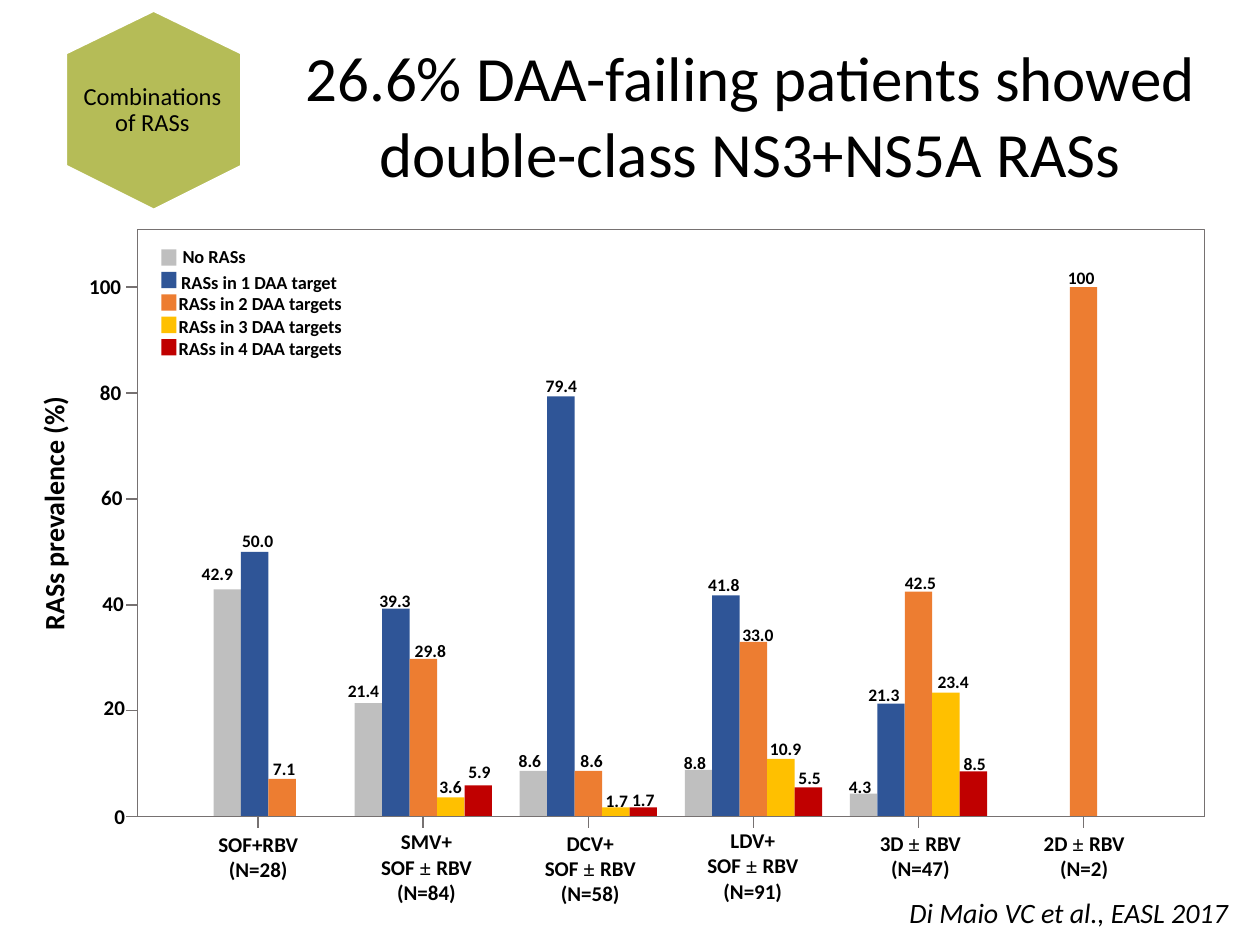
"""Build a slide with a bar diagram of RASs prevalence by treatment regimen."""
import lxml.etree
import pptx
import pptx.dml.color
import pptx.enum.shapes
import pptx.enum.text
import pptx.oxml.ns
import pptx.util

Inches = pptx.util.Inches
RGBColor = pptx.dml.color.RGBColor
Align = pptx.enum.text.PP_ALIGN
Anchor = pptx.enum.text.MSO_ANCHOR
AutoSize = pptx.enum.text.MSO_AUTO_SIZE

BLACK = RGBColor(0x00, 0x00, 0x00)
WHITE = RGBColor(0xFF, 0xFF, 0xFF)
AXIS_GRAY = RGBColor(0x76, 0x71, 0x71)
OLIVE = RGBColor(0xB5, 0xBC, 0x57)
GRAY = RGBColor(0xBF, 0xBF, 0xBF)
BLUE = RGBColor(0x2F, 0x55, 0x97)
ORANGE = RGBColor(0xED, 0x7D, 0x31)
YELLOW = RGBColor(0xFF, 0xC0, 0x00)
RED = RGBColor(0xC0, 0x00, 0x00)

PLOT_LEFT, PLOT_TOP, PLOT_RIGHT, BASELINE = 1.09, 1.82, 9.56, 6.48
UNIT_HEIGHT = 0.042
BAR_WIDTH = 0.218
FIRST_TICK, TICK_STEP, TICK_LENGTH = 2.05, 1.31, 0.09
LABEL_PADDING, DIGIT_WIDTH, POINT_WIDTH = 0.18, 0.08, 0.05

SERIES = [
    ("No RASs", GRAY, 1.35, 1.9),
    ("RASs in 1 DAA target", BLUE, 1.34, 2.1),
    ("RASs in 2 DAA targets", ORANGE, 1.32, 2.27),
    ("RASs in 3 DAA targets", YELLOW, 1.32, 2.45),
    ("RASs in 4 DAA targets", RED, 1.32, 2.63),
]

REGIMENS = [
    ("SOF+RBV\n(N=28)", (1.08, 6.55, 1.94, 0.5), 0.19,
     {0: ("42.9", 1.49, 4.42), 1: ("50.0", 1.81, 4.16), 2: ("7.1", 2.06, 5.97)}),
    ("SMV+\nSOF ± RBV\n(N=84)", (2.67, 6.53, 1.43, 0.71), 0,
     {0: ("21.4", 2.65, 5.35), 1: ("39.3", 2.9, 4.63), 2: ("29.8", 3.18, 5.03),
      3: ("3.6", 3.38, 6.11), 4: ("5.9", 3.61, 5.99)}),
    ("DCV+\nSOF ± RBV\n(N=58)", (3.97, 6.54, 1.43, 0.71), 0,
     {0: ("8.6", 4.01, 5.9), 1: ("79.4", 4.22, 2.93), 2: ("8.6", 4.5, 5.9),
      3: ("1.7", 4.7, 6.22), 4: ("1.7", 4.91, 6.21)}),
    ("LDV+\nSOF ± RBV\n(N=91)", (5.26, 6.52, 1.43, 0.71), 0,
     {0: ("8.8", 5.32, 5.92), 1: ("41.8", 5.51, 4.51), 2: ("33.0", 5.78, 4.9),
      3: ("10.9", 6, 5.81), 4: ("5.5", 6.23, 6.04)}),
    ("3D ± RBV\n(N=47)", (6.59, 6.54, 1.43, 0.5), 0,
     {0: ("4.3", 6.63, 6.11), 1: ("21.3", 6.78, 5.38), 2: ("42.5", 7.07, 4.49),
      3: ("23.4", 7.33, 5.28), 4: ("8.5", 7.54, 5.93)}),
    ("2D ± RBV\n(N=2)", (7.89, 6.54, 1.43, 0.5), 0, {2: ("100", 8.37, 2.07)}),
]

SCALE = [(0, 0.42, 6.33), (20, 0.42, 5.46), (40, 0.41, 4.64),
         (60, 0.4, 3.8), (80, 0.39, 2.96), (100, 0.39, 2.12)]


class DiagramSlide:
    """Hold the text style and the slide, and draw each kind of element."""

    def __init__(self, slide, font="Calibri", symbol_font="Times New Roman"):
        self.shapes = slide.shapes
        self.font = font
        self.symbol_font = symbol_font

    def text(self, content, box, size, align=Align.CENTER, wrap=True,
             anchor=Anchor.TOP, spacing=None, rotation=0, **style):
        shape = self.shapes.add_textbox(*map(Inches, box))
        shape.rotation = rotation
        frame_format = {"word_wrap": wrap, "vertical_anchor": anchor,
                        "auto_size": AutoSize.SHAPE_TO_FIT_TEXT}
        for name, value in frame_format.items():
            setattr(shape.text_frame, name, value)
        for index, line in enumerate(content.split("\n")):
            paragraph = (shape.text_frame.add_paragraph() if index
                         else shape.text_frame.paragraphs[0])
            paragraph.alignment = align
            paragraph.line_spacing = spacing
            before, symbol, after = line.partition("± ")
            for part in filter(None, (before, symbol, after)):
                run = paragraph.add_run()
                run.text = part
                name = self.symbol_font if part == symbol else self.font
                font_format = {"name": name, "size": pptx.util.Pt(size), **style}
                for key, value in font_format.items():
                    setattr(run.font, key, value)
                run.font.color.rgb = BLACK

    def value_label(self, value, left, top):
        points = value.count(".")
        width = (LABEL_PADDING + DIGIT_WIDTH * (len(value) - points)
                 + POINT_WIDTH * points)
        self.text(value, (left, top, width, 0.27), 10, wrap=False, bold=True)

    def paint(self, shape, fill=None, line=None, width=0.75):
        shape.shadow.inherit = False
        for part, color in ((shape.fill, fill), (shape.line.fill, line)):
            if color is None:
                part.background()
            else:
                part.solid()
                part.fore_color.rgb = color
        if line is not None:
            shape.line.width = pptx.util.Pt(width)

    def rectangle(self, box, **paint):
        kind = pptx.enum.shapes.MSO_SHAPE.RECTANGLE
        self.paint(self.shapes.add_shape(kind, *map(Inches, box)), **paint)

    def polygon(self, points, **paint):
        corners = [(Inches(x), Inches(y)) for x, y in points]
        builder = self.shapes.build_freeform(*corners[0])
        builder.add_line_segments(corners[1:], close=True)
        self.paint(builder.convert_to_shape(), **paint)

    def line(self, start, end, width=1):
        kind = pptx.enum.shapes.MSO_CONNECTOR.STRAIGHT
        connector = self.shapes.add_connector(kind, *map(Inches, start + end))
        connector.line.color.rgb = AXIS_GRAY
        connector.line.width = pptx.util.Pt(width)
        lxml.etree.SubElement(connector._element.spPr,
                              pptx.oxml.ns.qn("a:effectLst"))


def draw_axes(diagram):
    origin = (PLOT_LEFT, BASELINE)
    diagram.line(origin, (PLOT_RIGHT, BASELINE), 0.5)
    diagram.line((PLOT_LEFT, PLOT_TOP), origin, 0.5)
    for index in range(len(REGIMENS)):
        x = FIRST_TICK + index * TICK_STEP
        diagram.line((x, BASELINE), (x, BASELINE + TICK_LENGTH))
    for value, left, top in SCALE:
        y = BASELINE - value * UNIT_HEIGHT
        diagram.line((PLOT_LEFT, y), (PLOT_LEFT - TICK_LENGTH, y))
        diagram.text(str(value), (left, top, 0.67, 0.3), 12, Align.RIGHT, bold=True)
    diagram.text("RASs prevalence (%)", (-1.24, 3.89, 3.33, 0.37), 16,
                 rotation=270, bold=True)


def draw_bars(diagram):
    for index, (caption, box, shift, bars) in enumerate(REGIMENS):
        center = FIRST_TICK + index * TICK_STEP
        group_left = center - len(SERIES) * BAR_WIDTH / 2 + shift
        for series, (value, left, top) in bars.items():
            height = float(value) * UNIT_HEIGHT
            diagram.rectangle((group_left + series * BAR_WIDTH, BASELINE - height,
                               BAR_WIDTH, height), fill=SERIES[series][1])
            diagram.value_label(value, left, top)
        diagram.text(caption, box, 12, bold=True)
    diagram.rectangle((PLOT_LEFT, PLOT_TOP, PLOT_RIGHT - PLOT_LEFT,
                       BASELINE - PLOT_TOP), line=AXIS_GRAY)


def draw_legend(diagram):
    for index, (name, color, left, top) in enumerate(SERIES):
        diagram.rectangle((1.28, 1.98 + index * 0.178, 0.12, 0.13), fill=color)
        width = 0.71 if index == 0 else 1.53
        diagram.text(name, (left, top, width, 0.28), 10.5, Align.LEFT,
                     wrap=False, bold=True)


def main():
    presentation = pptx.Presentation()
    presentation.slide_width = Inches(10)
    presentation.slide_height = Inches(7.5)
    diagram = DiagramSlide(presentation.slides.add_slide(presentation.slide_layouts[6]))
    diagram.text("26.6% DAA-failing patients showed double-class NS3+NS5A RASs",
                 (2.14, 0.25, 7.63, 1.31), 36, anchor=Anchor.MIDDLE)
    draw_axes(diagram)
    draw_bars(diagram)
    draw_legend(diagram)
    diagram.text("Di Maio VC et al., EASL 2017", (7.12, 7.06, 2.76, 0.37), 16,
                 Align.LEFT, wrap=False, italic=True)
    diagram.polygon([(1.22, 0.08), (1.92, 0.42), (1.92, 1.32), (1.22, 1.67),
                     (0.52, 1.32), (0.52, 0.42)], fill=OLIVE, line=WHITE, width=2)
    diagram.text("Combinations of RASs", (0.52, 0.62, 1.38, 0.53), 14, spacing=0.9)
    presentation.save("out.pptx")


if __name__ == "__main__":
    main()
